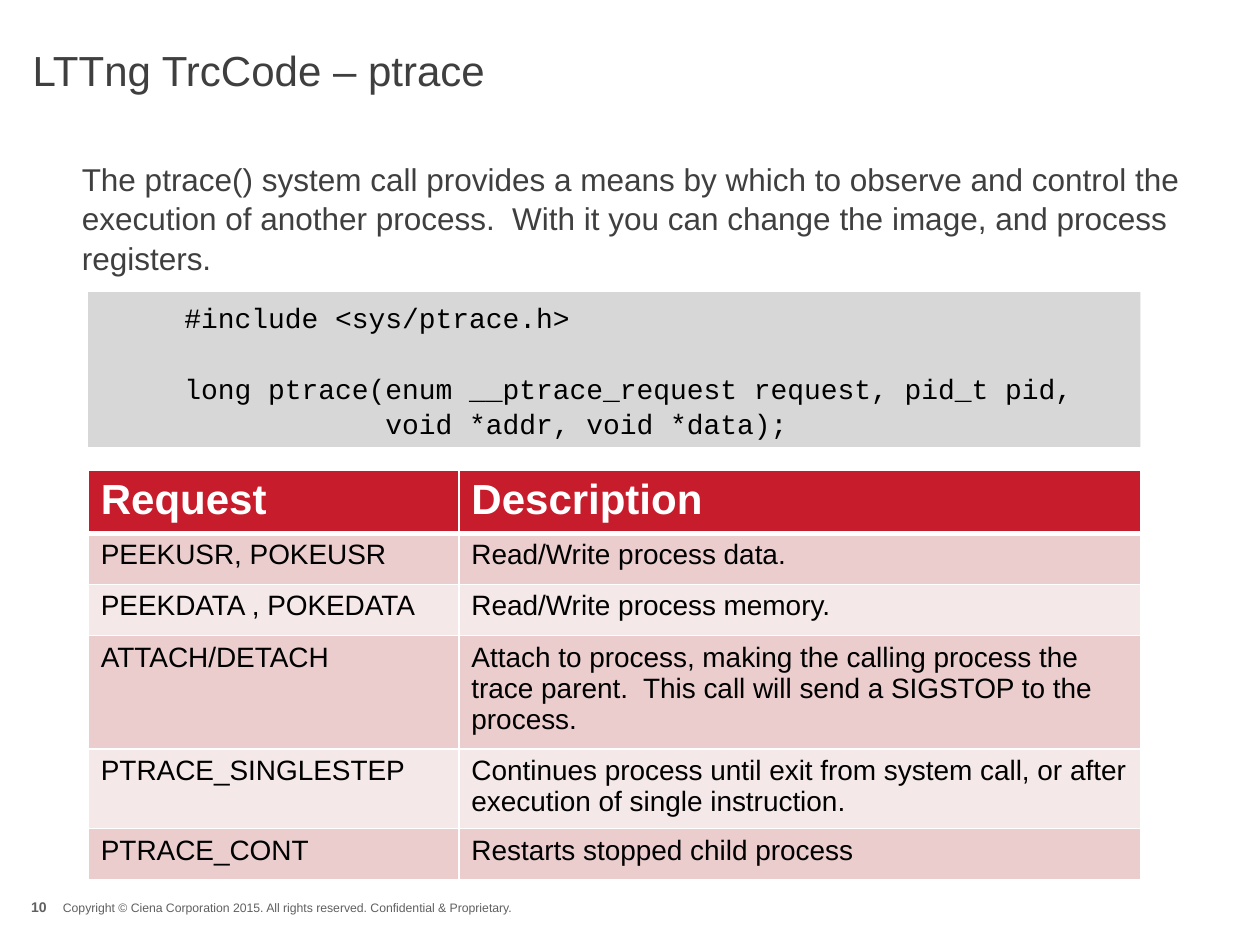
from lxml import etree
from pptx import Presentation
from pptx.dml.color import RGBColor
from pptx.enum.shapes import MSO_SHAPE
from pptx.enum.text import MSO_ANCHOR, PP_ALIGN
from pptx.oxml.ns import qn
from pptx.util import Cm, Pt

RECT = MSO_SHAPE.RECTANGLE
TOP, MIDDLE = MSO_ANCHOR.TOP, MSO_ANCHOR.MIDDLE
LEFT = PP_ALIGN.LEFT

TITLE = "LTTng TrcCode – ptrace"
INTRO = ("The ptrace() system call provides a means by which to observe and "
         "control the execution of another process.  With it you can change "
         "the image, and process registers.")
CODE = """     #include <sys/ptrace.h>

     long ptrace(enum __ptrace_request request, pid_t pid,
                 void *addr, void *data);"""
ROWS = [
    ("Request", "Description"),
    ("PEEKUSR, POKEUSR", "Read/Write process data."),
    ("PEEKDATA , POKEDATA", "Read/Write process memory."),
    ("ATTACH/DETACH", "Attach to process, making the calling process the trace "
     "parent.  This call will send a SIGSTOP to the process."),
    ("PTRACE_SINGLESTEP", "Continues process until exit from system call, "
     "or after execution of single instruction."),
    ("PTRACE_CONT", "Restarts stopped child process"),
]
PAGE = "10"
NOTICE = ("Copyright © Ciena Corporation 2015. All rights reserved. "
          "Confidential & Proprietary.")

EDGE, WIDE = 1.78, 21.21
COLS = (7.47, 13.74)
HIGHS = (1.17, 1.03, 1.03, 2.14, 1.51, 1.03)
HEAD, BANDS = "C71C2C", ("F5E8E8", "EBCDCD")
DARK, GREY, BLACK, WHITE = "3F3F3F", "606060", "000000", "FFFFFF"


def tint(fill, color):
    fill.solid()
    fill.fore_color.rgb = RGBColor.from_string(color)


def write(frame, text, size, color, bold=False, font="Arial", space=None):
    frame.text = text
    for para in frame.paragraphs:
        para.alignment = LEFT
        para.line_spacing = space
        para.font.name = font
        para.font.size = Pt(size)
        para.font.bold = bold
        para.font.color.rgb = RGBColor.from_string(color)


def setup(frame, left, right, anchor=TOP):
    """Set the side insets, wrapping and anchor of a text frame."""
    frame.margin_left, frame.margin_right = Cm(left), Cm(right)
    frame.margin_top = frame.margin_bottom = Cm(0.13)
    frame.word_wrap = True
    frame.vertical_anchor = anchor


def add_text(slide, box, text, size, color, inset=0, **style):
    frame = slide.shapes.add_textbox(*map(Cm, box)).text_frame
    setup(frame, inset, 0.25)
    write(frame, text, size, color, **style)


def rule(cell, side, width):
    """Draw one white cell border; must come before the cell's fill."""
    props = cell._tc.get_or_add_tcPr()
    line = etree.SubElement(props, qn(f"a:{side}"), w=str(Pt(width)))
    fill = etree.SubElement(line, qn("a:solidFill"))
    etree.SubElement(fill, qn("a:srgbClr"), val=WHITE)


def add_grid(slide):
    box = map(Cm, (EDGE, 9.48, WIDE, sum(HIGHS)))
    table = slide.shapes.add_table(len(ROWS), len(COLS), *box).table
    for col, width in zip(table.columns, COLS):
        col.width = Cm(width)
    for r, (row, high) in enumerate(zip(ROWS, HIGHS)):
        table.rows[r].height = Cm(high)
        top = r == 0
        for c, text in enumerate(row):
            cell = table.cell(r, c)
            for side in ("lnL", "lnR", "lnT", "lnB"):
                thick = (top and side == "lnB") or (r == 1 and side == "lnT")
                rule(cell, side, 3 if thick else 1)
            tint(cell.fill, HEAD if top else BANDS[r % 2])
            write(cell.text_frame, text, 24 if top else 16,
                  WHITE if top else BLACK, bold=top)


def main():
    deck = Presentation()
    deck.slide_width, deck.slide_height = Cm(25.4), Cm(19.05)
    slide = deck.slides.add_slide(deck.slide_layouts[5])

    title = slide.shapes.title
    title.left, title.top, title.width, title.height = map(
        Cm, (0.66, 0.76, 24.08, 2.11))
    setup(title.text_frame, 0, 0)
    write(title.text_frame, TITLE, 24, DARK)

    add_text(slide, (1.65, 3.07, 23.11, 2.6), INTRO, 18, DARK, space=1.04)

    panel = slide.shapes.add_shape(RECT, *map(Cm, (EDGE, 5.89, WIDE, 3.12)))
    panel.shadow.inherit = False
    tint(panel.fill, "D7D7D7")
    panel.line.fill.background()
    setup(panel.text_frame, 0.25, 0.25, MIDDLE)
    write(panel.text_frame, CODE, 16, BLACK, font="Courier New", space=1.05)

    add_grid(slide)
    add_text(slide, (0.38, 17.98, 1.07, 0.61), PAGE, 8, GREY, 0.25, bold=True)
    add_text(slide, (1.27, 18.01, 11.63, 0.56), NOTICE, 7, GREY)
    deck.save("out.pptx")


if __name__ == "__main__":
    main()
